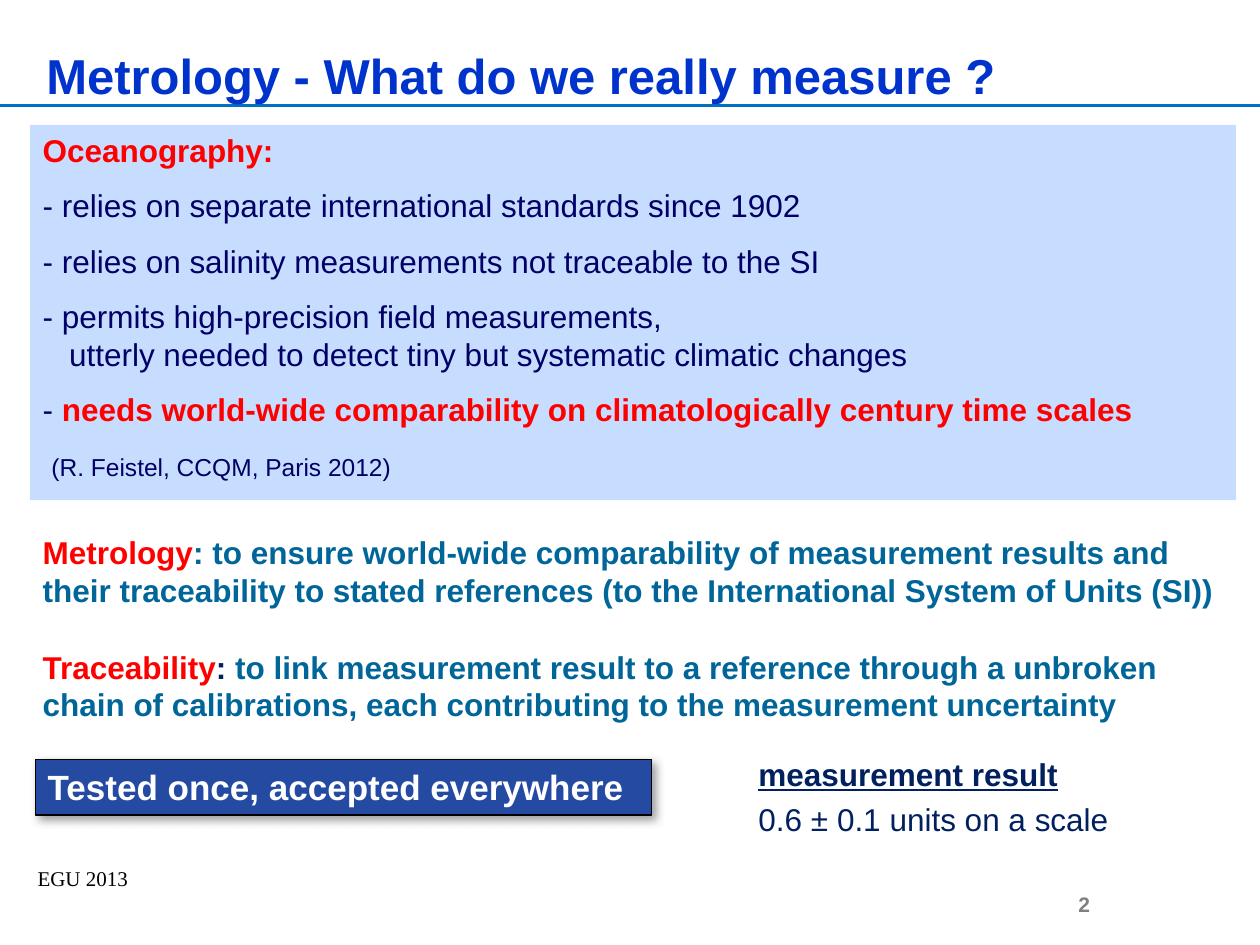
from dataclasses import dataclass
from typing import Optional

from lxml.etree import SubElement
from pptx import Presentation
from pptx.dml.color import RGBColor
from pptx.enum.shapes import MSO_CONNECTOR as Connector, MSO_SHAPE as ShapeKind
from pptx.enum.text import MSO_ANCHOR as Anchor, PP_ALIGN as Align
from pptx.oxml.ns import qn
from pptx.util import Inches, Pt


@dataclass(frozen=True)
class Theme:
    sans: str = "Arial"
    serif: str = "Times New Roman"
    title_blue: str = "0033CC"
    rule_blue: str = "0070C0"
    panel: str = "C7DDFF"
    navy: str = "000066"
    dark: str = "002060"
    teal: str = "006699"
    red: str = "FF0000"
    banner: str = "244AA2"
    white: str = "FFFFFF"
    black: str = "000000"
    gray: str = "808080"
    title_size: int = 28
    banner_size: int = 20
    body_size: int = 18
    source_size: int = 14
    footer_size: int = 12


THEME = Theme()


@dataclass(frozen=True)
class Run:
    text: str
    color: str
    bold: bool = False
    size: int = THEME.body_size
    font: str = THEME.sans
    underline: bool = False


@dataclass(frozen=True)
class Line:
    runs: tuple[Run, ...]
    before: float = 0
    after: float = 0
    indent: float = 0
    align: Align = Align.LEFT


@dataclass(frozen=True)
class Block:
    left: float
    top: float
    width: float
    height: float
    lines: tuple[Line, ...]
    anchor: Anchor = Anchor.TOP
    fill: Optional[str] = None
    outline: Optional[str] = None
    shadow: bool = False
    inset: Optional[float] = None


def rgb(color: str) -> RGBColor:
    return RGBColor.from_string(color)


def write_line(paragraph, line: Line) -> None:
    paragraph.alignment = line.align
    paragraph.space_before = Pt(line.before)
    paragraph.space_after = Pt(line.after)
    if line.indent:
        properties = paragraph._p.get_or_add_pPr()
        properties.set("marL", str(Inches(line.indent)))
        properties.set("indent", "0")
    for item in line.runs:
        run = paragraph.add_run()
        run.text = item.text
        font = run.font
        font.name = item.font
        font.size = Pt(item.size)
        font.bold = item.bold
        font.underline = item.underline
        font.color.rgb = rgb(item.color)


def add_shadow(shape) -> None:
    effects = shape._element.spPr.find(qn("a:effectLst"))
    shadow = SubElement(
        effects, qn("a:outerShdw"), blurRad=str(Pt(5)), dist=str(Pt(3)),
        dir=str(45 * 60000), algn="tl", rotWithShape="0",
    )
    color = SubElement(shadow, qn("a:srgbClr"), val=THEME.gray)
    SubElement(color, qn("a:alpha"), val="75000")


def add_block(slide, block: Block) -> None:
    place = [Inches(value) for value in (block.left, block.top, block.width, block.height)]
    if block.fill:
        shape = slide.shapes.add_shape(ShapeKind.RECTANGLE, *place)
        shape.shadow.inherit = False
        shape.fill.solid()
        shape.fill.fore_color.rgb = rgb(block.fill)
        if block.outline:
            shape.line.color.rgb = rgb(block.outline)
            shape.line.width = Pt(0.75)
        else:
            shape.line.fill.background()
        if block.shadow:
            add_shadow(shape)
    else:
        shape = slide.shapes.add_textbox(*place)
    frame = shape.text_frame
    frame.word_wrap = True
    frame.vertical_anchor = block.anchor
    if block.inset is not None:
        frame.margin_left = frame.margin_right = Inches(block.inset)
        frame.margin_top = frame.margin_bottom = Inches(block.inset)
    for index, line in enumerate(block.lines):
        paragraph = frame.add_paragraph() if index else frame.paragraphs[0]
        write_line(paragraph, line)


def add_rule(slide, top: float, width: float) -> None:
    rule = slide.shapes.add_connector(
        Connector.STRAIGHT, Inches(0), Inches(top), Inches(width), Inches(top)
    )
    rule.line.color.rgb = rgb(THEME.rule_blue)
    rule.line.width = Pt(1.5)
    SubElement(rule._element.spPr, qn("a:effectLst"))


def point(text: str) -> Line:
    return Line((Run(text, THEME.navy),), before=10)


OCEANOGRAPHY = (
    Line((Run("Oceanography:", THEME.red, True),)),
    point("- relies on separate international standards since 1902"),
    point("- relies on salinity measurements not traceable to the SI"),
    point("- permits high-precision field measurements,"),
    Line((Run("utterly needed to detect tiny but systematic climatic changes", THEME.navy),),
         indent=0.21),
    Line((
        Run("- ", THEME.navy),
        Run("needs world-wide comparability on climatologically century time scales",
            THEME.red, True),
    ), before=10),
    Line((Run("(R. Feistel, CCQM, Paris 2012)", THEME.navy, size=THEME.source_size),),
         before=14, indent=0.07),
)

METROLOGY = Line((
    Run("Metrology", THEME.red, True),
    Run(": to ensure world-wide comparability of measurement results and their traceability "
        "to stated references (to the International System of Units (SI))", THEME.teal, True),
))

TRACEABILITY = Line((
    Run("Traceability", THEME.red, True),
    Run(": ", THEME.dark, True),
    Run("to link measurement result to a reference through a unbroken chain of calibrations, "
        "each contributing to the measurement uncertainty", THEME.teal, True),
))

RESULT = (
    Line((Run("measurement result", THEME.dark, True, underline=True),), after=4),
    Line((Run("0.6 ± 0.1 units on a scale", THEME.dark),), after=4),
)

TITLE = Run("Metrology - What do we really measure ?", THEME.title_blue, True, THEME.title_size)
BANNER = Run("Tested once, accepted everywhere", THEME.white, True, THEME.banner_size)
EVENT = Run("EGU 2013", THEME.black, size=THEME.footer_size, font=THEME.serif)
NUMBER = Run("2", THEME.gray, True, THEME.footer_size)

BLOCKS = (
    Block(6.42, 6.98, 2.33, 0.39, (Line((NUMBER,), align=Align.RIGHT),), Anchor.MIDDLE),
    Block(0.27, 0.36, 9.53, 0.47, (Line((TITLE,)),), Anchor.MIDDLE),
    Block(0.2, 6.82, 3.17, 0.5, (Line((EVENT,)),)),
    Block(0.24, 0.99, 9.57, 2.98, OCEANOGRAPHY, fill=THEME.panel),
    Block(0.24, 4.18, 9.61, 0.71, (METROLOGY,)),
    Block(0.24, 5.09, 9.53, 0.71, (TRACEABILITY,)),
    Block(5.98, 5.95, 2.87, 0.75, RESULT, inset=0.04),
    Block(0.28, 6.03, 4.89, 0.44, (Line((BANNER,)),),
          fill=THEME.banner, outline=THEME.black, shadow=True),
)


def main() -> None:
    presentation = Presentation()
    presentation.slide_width = Inches(10)
    presentation.slide_height = Inches(7.5)
    slide = presentation.slides.add_slide(presentation.slide_layouts[6])
    add_rule(slide, top=0.84, width=10)
    for block in BLOCKS:
        add_block(slide, block)
    presentation.save("out.pptx")


if __name__ == "__main__":
    main()
